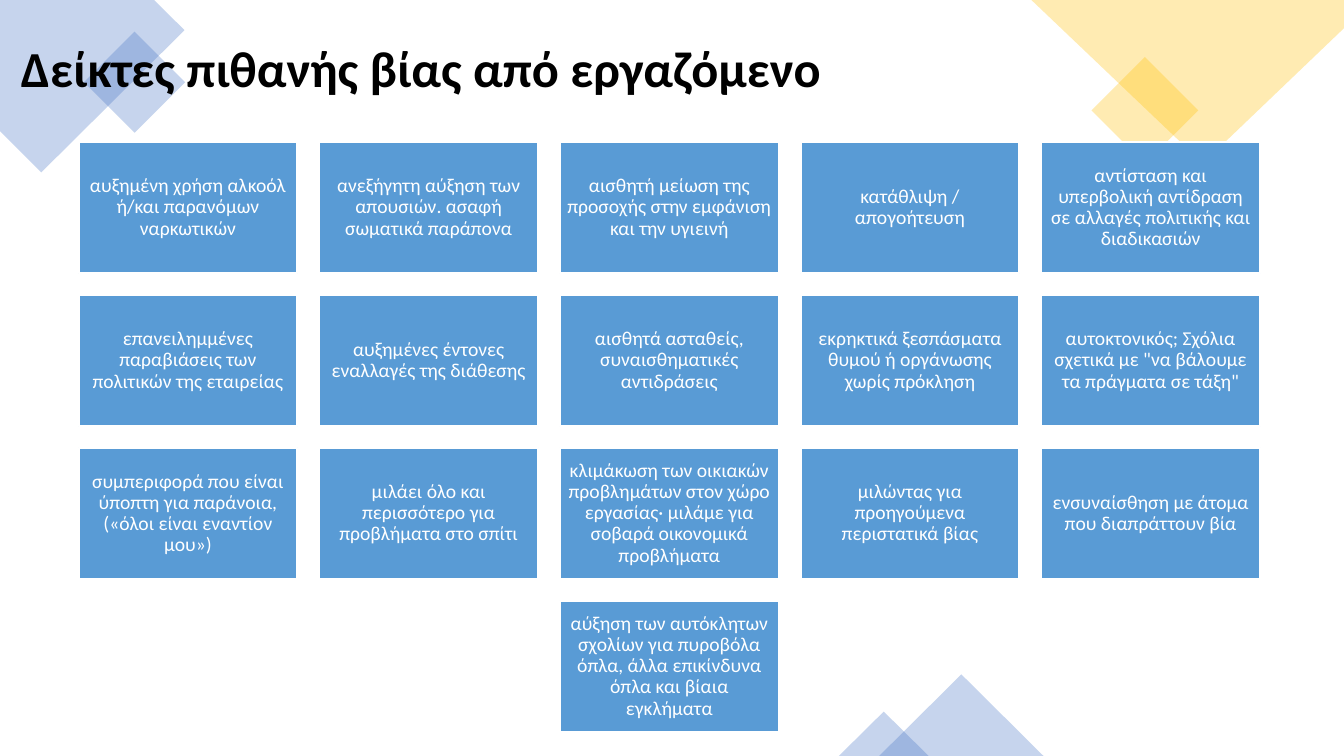
from lxml.etree import SubElement
from pptx import Presentation
from pptx.dml.color import RGBColor
from pptx.enum.shapes import MSO_SHAPE
from pptx.enum.text import MSO_ANCHOR, PP_ALIGN
from pptx.oxml.ns import qn
from pptx.util import Inches, Pt

BLUE = RGBColor(0x44, 0x72, 0xC4)
GOLD = RGBColor(0xFF, 0xC0, 0x00)
CARD = RGBColor(0x59, 0x9B, 0xD5)
WHITE = RGBColor(0xFF, 0xFF, 0xFF)
BLACK = RGBColor(0x00, 0x00, 0x00)

# Content
TITLE = "Δείκτες πιθανής βίας από εργαζόμενο"
ROWS = [
    ["αυξημένη χρήση αλκοόλ ή/και παρανόμων ναρκωτικών",
     "ανεξήγητη αύξηση των απουσιών. ασαφή σωματικά παράπονα",
     "αισθητή μείωση της προσοχής στην εμφάνιση και την υγιεινή",
     "κατάθλιψη / απογοήτευση",
     "αντίσταση και υπερβολική αντίδραση σε αλλαγές πολιτικής και διαδικασιών"],
    ["επανειλημμένες παραβιάσεις των πολιτικών της εταιρείας",
     "αυξημένες έντονες εναλλαγές της διάθεσης",
     "αισθητά ασταθείς, συναισθηματικές αντιδράσεις",
     "εκρηκτικά ξεσπάσματα θυμού ή οργάνωσης χωρίς πρόκληση",
     "αυτοκτονικός; Σχόλια σχετικά με \"να βάλουμε τα πράγματα σε τάξη\""],
    ["συμπεριφορά που είναι ύποπτη για παράνοια, («όλοι είναι εναντίον μου»)",
     "μιλάει όλο και περισσότερο για προβλήματα στο σπίτι",
     "κλιμάκωση των οικιακών προβλημάτων στον χώρο εργασίας· "
     "μιλάμε για σοβαρά οικονομικά προβλήματα",
     "μιλώντας για προηγούμενα περιστατικά βίας",
     "ενσυναίσθηση με άτομα που διαπράττουν βία"],
    ["αύξηση των αυτόκλητων σχολίων για πυροβόλα όπλα, "
     "άλλα επικίνδυνα όπλα και βίαια εγκλήματα"],
]

# Corner decoration, in inches
POLYGONS = [
    (BLUE, [(1.53, 0), (0, 0), (0, 1.3), (0.41, 1.71), (1.83, 0.3)]),
    (GOLD, [(13.33, 0), (10.23, 0), (11.93, 1.62), (13.33, 0.28)]),
]
PRESETS = [  # shape, colour, rotation, left, top, width, height
    (MSO_SHAPE.RECTANGLE, BLUE, 315, 0.98, 0.46, 0.71, 0.71),
    (MSO_SHAPE.RECTANGLE, GOLD, 315, 10.98, 0.72, 0.75, 0.75),
    (MSO_SHAPE.ISOSCELES_TRIANGLE, BLUE, 0, 8.72, 6.69, 1.63, 0.81),
    (MSO_SHAPE.ISOSCELES_TRIANGLE, BLUE, 0, 8.32, 7.06, 0.89, 0.44),
]

# Card grid, in inches
COLUMNS = 5
GRID_LEFT, GRID_TOP = 0.78, 1.41
CARD_W, CARD_H = 2.17, 1.3
GAP = CARD_W / 10


def style_decor(sp, color):
    sp.shadow.inherit = False
    sp.line.fill.background()
    sp.fill.solid()
    sp.fill.fore_color.rgb = color
    clr = sp.fill._xPr.find(qn("a:solidFill"))[0]
    SubElement(clr, qn("a:alpha")).set("val", "30000")


def write(sp, text, size, color, align, bold=False):
    tf = sp.text_frame
    tf.word_wrap = True
    tf.vertical_anchor = MSO_ANCHOR.MIDDLE
    p = tf.paragraphs[0]
    p.text = text
    p.alignment = align
    p.line_spacing = 0.9
    p.font.name = "Calibri"
    p.font.size = Pt(size)
    p.font.bold = bold
    p.font.color.rgb = color
    return tf


prs = Presentation()
prs.slide_width, prs.slide_height = Inches(13.33), Inches(7.5)
s = prs.slides.add_slide(prs.slide_layouts[6])

# Corner shapes
for color, points in POLYGONS:
    (x0, y0), *rest = [(Inches(x), Inches(y)) for x, y in points]
    builder = s.shapes.build_freeform(x0, y0)
    builder.add_line_segments(rest, close=True)
    style_decor(builder.convert_to_shape(), color)
for kind, color, rotation, *box in PRESETS:
    sp = s.shapes.add_shape(kind, *map(Inches, box))
    sp.rotation = rotation
    style_decor(sp, color)

# Title
title = s.shapes.add_textbox(*map(Inches, (0.11, 0.09, 11.84, 1.23)))
write(title, TITLE, 36, BLACK, PP_ALIGN.LEFT, bold=True)

# Cards, each row centred on the grid
for row, texts in enumerate(ROWS):
    first = (COLUMNS - len(texts)) / 2
    for col, text in enumerate(texts):
        left = GRID_LEFT + (first + col) * (CARD_W + GAP)
        top = GRID_TOP + row * (CARD_H + GAP)
        sp = s.shapes.add_shape(MSO_SHAPE.RECTANGLE,
                                *map(Inches, (left, top, CARD_W, CARD_H)))
        sp.shadow.inherit = False
        sp.fill.solid()
        sp.fill.fore_color.rgb = CARD
        sp.line.color.rgb = WHITE
        sp.line.width = Pt(1.5)
        tf = write(sp, text, 14, WHITE, PP_ALIGN.CENTER)
        tf.margin_left = tf.margin_right = Inches(0.06)
        tf.margin_top = tf.margin_bottom = Inches(0.06)

prs.save("out.pptx")
